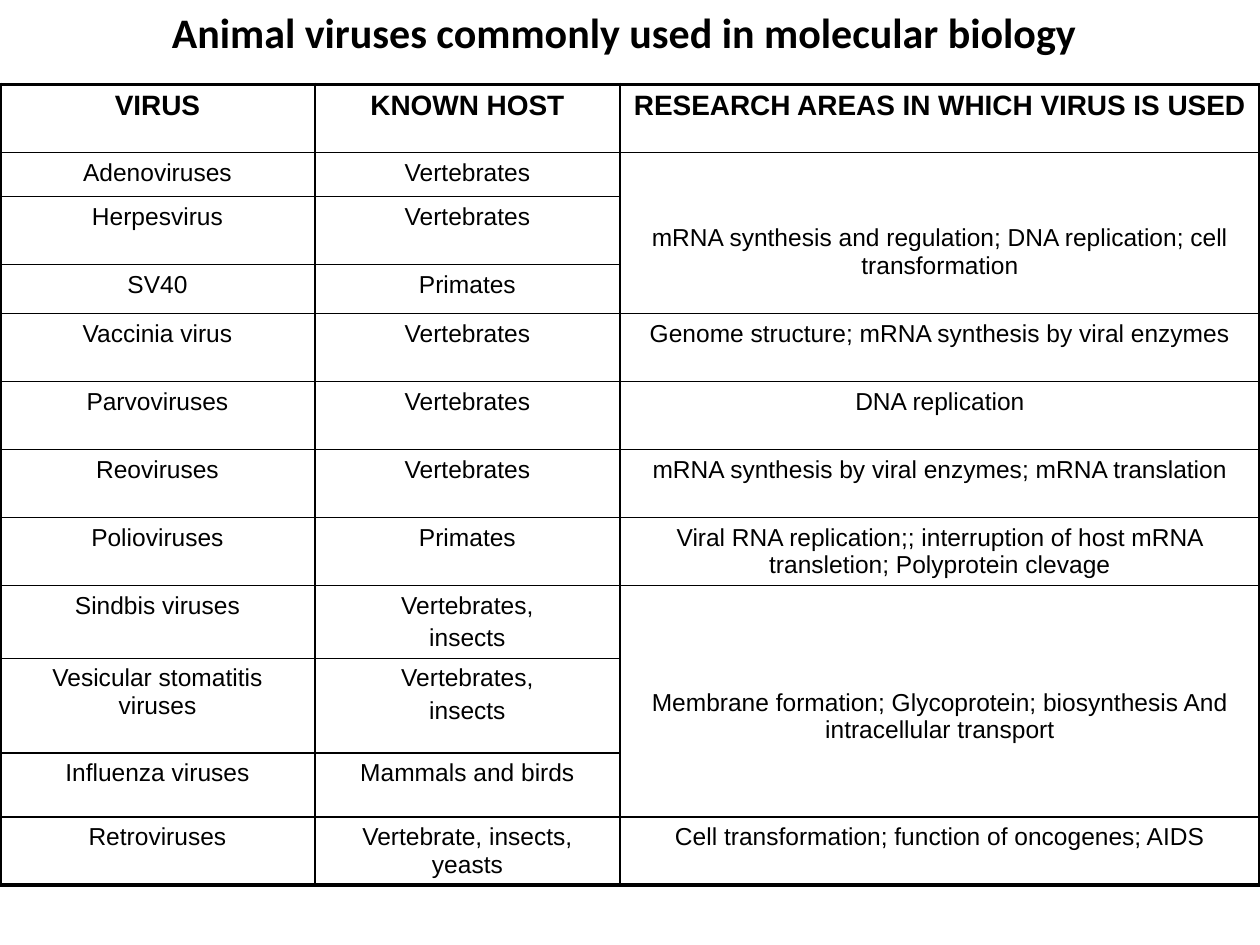
"""Build a slide with a table of animal viruses used in molecular biology."""
from lxml.etree import SubElement
from pptx import Presentation
from pptx.dml.color import RGBColor
from pptx.enum.text import MSO_ANCHOR, PP_ALIGN
from pptx.oxml.ns import qn
from pptx.util import Inches, Pt

THEME = {
    "ink": "000000",
    "title": {"name": "Calibri", "size": Pt(24), "bold": True},
    "header": {"name": "Arial", "size": Pt(16), "bold": True},
    "body": {"name": "Arial", "size": Pt(14), "bold": False},
    "outer_line": Pt(2.25),
    "inner_line": Pt(1),
}
COLUMN_WIDTHS = [2.5, 2.42, 5.08]
ROWS = [
    (0.54, "VIRUS", "KNOWN HOST", "RESEARCH AREAS IN WHICH VIRUS IS USED"),
    (0.35, "Adenoviruses", "Vertebrates",
     "mRNA synthesis and regulation; DNA replication; cell transformation"),
    (0.54, "Herpesvirus", "Vertebrates", ""),
    (0.39, "SV40", "Primates", ""),
    (0.54, "Vaccinia virus", "Vertebrates", "Genome structure; mRNA synthesis by viral enzymes"),
    (0.54, "Parvoviruses", "Vertebrates", "DNA replication"),
    (0.54, "Reoviruses", "Vertebrates", "mRNA synthesis by viral enzymes; mRNA translation"),
    (0.54, "Polioviruses", "Primates",
     "Viral RNA replication;; interruption of host mRNA transletion; Polyprotein clevage"),
    (0.57, "Sindbis viruses", "Vertebrates,\ninsects",
     "Membrane formation; Glycoprotein; biosynthesis And intracellular transport"),
    (0.75, "Vesicular stomatitis viruses", "Vertebrates,\ninsects", ""),
    (0.51, "Influenza viruses", "Mammals and birds", ""),
    (0.54, "Retroviruses", "Vertebrate, insects, yeasts",
     "Cell transformation; function of oncogenes; AIDS"),
]
MERGED_ROWS = [(1, 3, 0.57), (8, 10, 0.82)]


def format_paragraph(paragraph, font_values, space_before):
    paragraph.alignment = PP_ALIGN.CENTER
    paragraph.space_before = space_before
    for name, value in font_values.items():
        setattr(paragraph.font, name, value)
    paragraph.font.color.rgb = RGBColor.from_string(THEME["ink"])


def add_border(cell, side, width):
    line = SubElement(cell._tc.get_or_add_tcPr(), qn(f"a:ln{side}"), w=str(width))
    fill = SubElement(line, qn("a:solidFill"))
    SubElement(fill, qn("a:srgbClr"), val=THEME["ink"])


presentation = Presentation()
presentation.slide_width = Inches(10)
presentation.slide_height = Inches(7.5)
slide = presentation.slides.add_slide(presentation.slide_layouts[5])

title = slide.shapes.title
title_box = {"left": 0.58, "top": 0, "width": 8.75, "height": 0.5}
for name, value in title_box.items():
    setattr(title, name, Inches(value))
title.text_frame.text = "Animal viruses commonly used in molecular biology"
title.text_frame.vertical_anchor = MSO_ANCHOR.MIDDLE
format_paragraph(title.text_frame.paragraphs[0], THEME["title"], Pt(0))

table = slide.shapes.add_table(
    len(ROWS), len(COLUMN_WIDTHS), Inches(0), Inches(0.67),
    Inches(sum(COLUMN_WIDTHS)), Inches(sum(row[0] for row in ROWS)),
).table
table.first_row = False
table.horz_banding = False
for column, width in zip(table.columns, COLUMN_WIDTHS):
    column.width = Inches(width)

last_row, last_column = len(ROWS) - 1, len(COLUMN_WIDTHS) - 1
for row_index, (height, *texts) in enumerate(ROWS):
    table.rows[row_index].height = Inches(height)
    font_values = THEME["header"] if row_index == 0 else THEME["body"]
    for column_index, text in enumerate(texts):
        cell = table.cell(row_index, column_index)
        outer_sides = {
            "L": column_index == 0,
            "R": column_index == last_column,
            "T": row_index == 0,
            "B": row_index == last_row,
        }
        for side, is_outer in outer_sides.items():
            add_border(cell, side, THEME["outer_line" if is_outer else "inner_line"])
        cell.fill.background()
        cell.text = text
        for paragraph in cell.text_frame.paragraphs:
            format_paragraph(paragraph, font_values, Pt(2.8))

for first, last, top_margin in MERGED_ROWS:
    research_cell = table.cell(first, last_column)
    research_cell.merge(table.cell(last, last_column))
    research_cell.margin_top = Inches(top_margin)

presentation.save("out.pptx")
